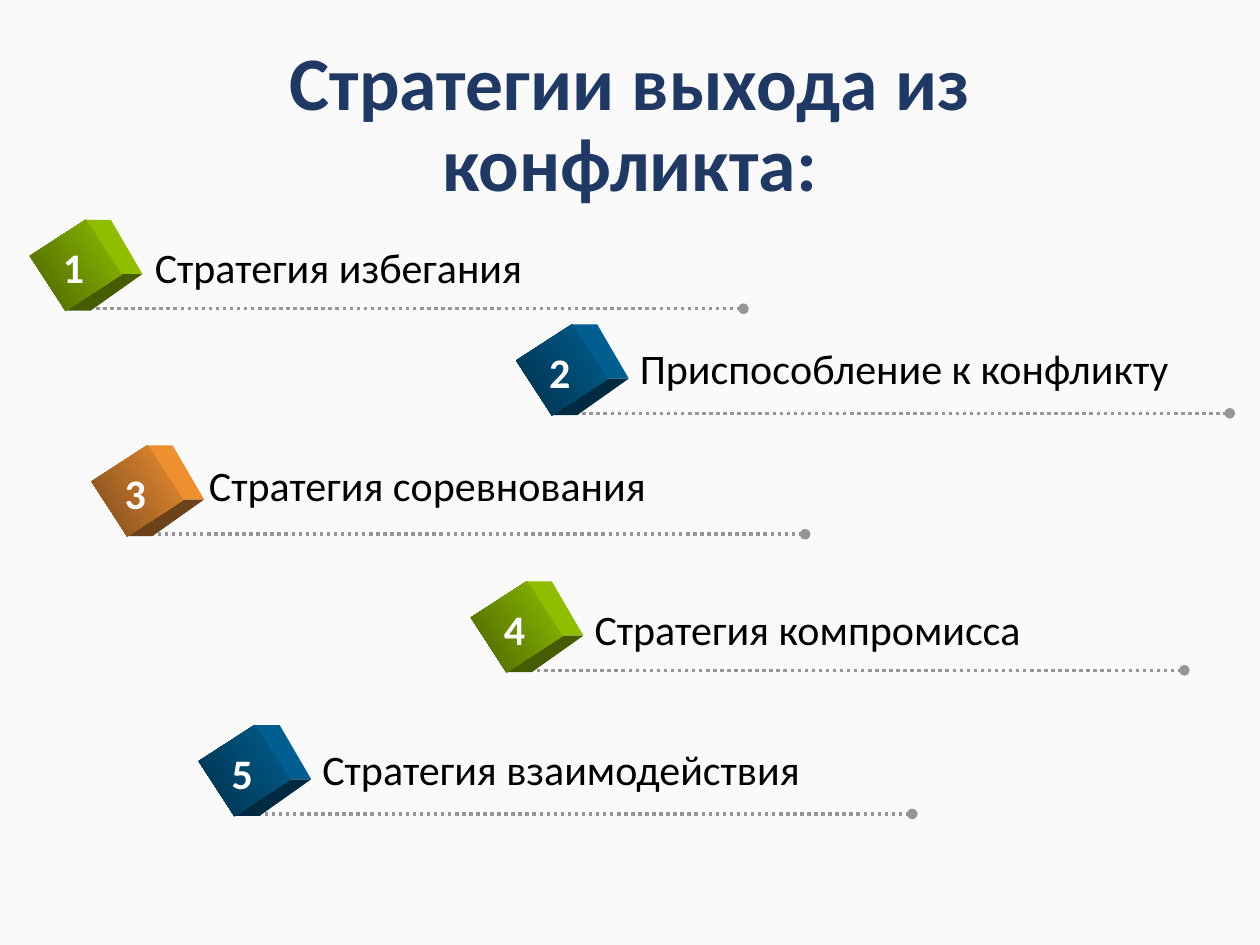
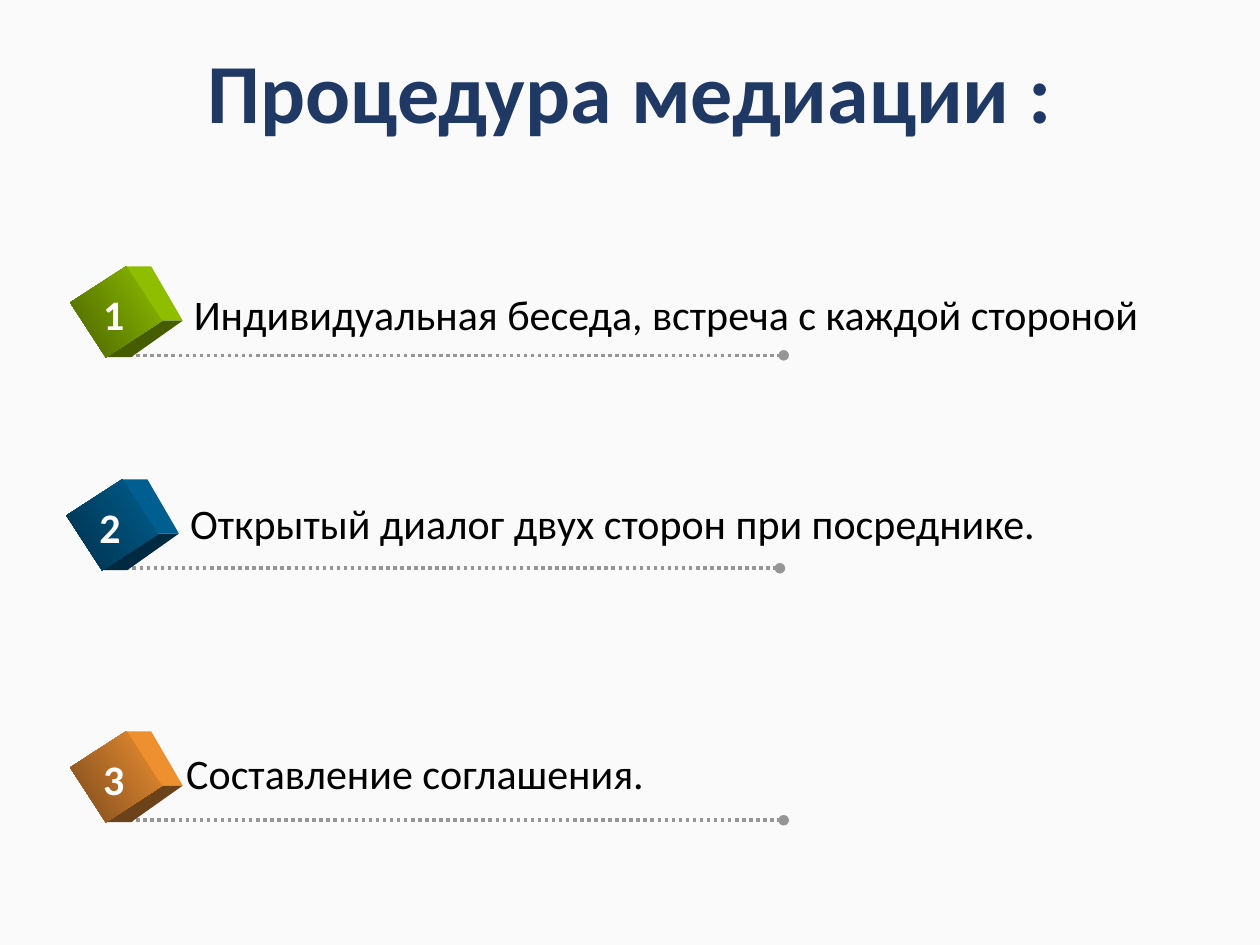
"""Build two slides of numbered cubes with dotted rules under each label."""
from dataclasses import dataclass

import pptx
import pptx.dml.color
import pptx.enum.dml
import pptx.enum.shapes
import pptx.enum.text
import pptx.oxml
import pptx.oxml.ns
import pptx.util

Inches = pptx.util.Inches
FONT = "Calibri"
BACKGROUND = "FAFAFA"
TITLE_COLOR = "203864"
RULE_COLOR = "969696"
CUBE_TURN = 57
FRONT_WIDTH, FRONT_HEIGHT = 0.52, 0.53
TOP_FACE = [(0.08, -0.36), (0.28, -0.36), (0.53, 0.07), (0.36, 0.07)]
BOTTOM_FACE = [(-0.08, 0.36), (0.12, 0.36), (0.53, 0.07), (0.36, 0.07)]


@dataclass(frozen=True)
class Palette:
    light: str
    shade: str
    dark: str


@dataclass(frozen=True)
class Step:
    label: str
    left: float
    top: float
    label_left: float
    label_top: float
    label_width: float


@dataclass(frozen=True)
class Page:
    title: str
    title_size: float
    title_height: float
    steps: tuple[Step, ...]


GREEN = Palette("8FBE00", "4A6300", "455C00")
BLUE = Palette("005F90", "00304A", "002A42")
ORANGE = Palette("EE9030", "7A4A1E", "6B421A")
PALETTES = (GREEN, BLUE, ORANGE)

PAGES = (
    Page("Стратегии выхода из конфликта:", 43.2, 1.35, (
        Step("Стратегия избегания", 0.34, 1.82, 1.13, 1.87, 3.15),
        Step("Приспособление к конфликту", 4.2, 2.65, 4.98, 2.67, 4.44),
        Step("Стратегия соревнования", 0.83, 3.61, 1.56, 3.6, 3.7),
        Step("Стратегия компромисса", 3.84, 4.69, 4.62, 4.74, 3.61),
        Step("Стратегия взаимодействия", 1.68, 5.83, 2.46, 5.85, 4.03),
    )),
    Page("Процедура медиации :", 48, 0.87, (
        Step("Индивидуальная беседа, встреча с каждой стороной",
             0.66, 2.19, 1.44, 2.24, 7.74),
        Step("Открытый диалог двух сторон при посреднике.",
             0.63, 3.88, 1.41, 3.9, 6.92),
        Step("Составление соглашения.", 0.66, 5.88, 1.38, 5.88, 3.83),
    )),
)


def rgb(value: str) -> pptx.dml.color.RGBColor:
    """Turn a hex string into a colour."""
    return pptx.dml.color.RGBColor.from_string(value)


def add_text(shapes, text: str, left: float, top: float, width: float,
             height: float, size: float, color: str, bold: bool = False,
             wrap: bool = False):
    """Add a one-paragraph text box and return it."""
    box = shapes.add_textbox(Inches(left), Inches(top), Inches(width), Inches(height))
    box.text_frame.text = text
    box.text_frame.word_wrap = wrap
    font = box.text_frame.paragraphs[0].runs[0].font
    font.name, font.size, font.bold = FONT, pptx.util.Pt(size), bold
    font.color.rgb = rgb(color)
    return box


def add_rule(shapes, left: float, top: float, length: float) -> None:
    """Add a dotted rule that ends in a round dot."""
    rule = shapes.add_connector(pptx.enum.shapes.MSO_CONNECTOR.STRAIGHT, Inches(left),
                                Inches(top), Inches(left + length), Inches(top))
    rule.line.color.rgb = rgb(RULE_COLOR)
    rule.line.width = pptx.util.Pt(2)
    rule.line.dash_style = pptx.enum.dml.MSO_LINE.ROUND_DOT
    properties = rule._element.spPr
    outline = properties.find(pptx.oxml.ns.qn("a:ln"))
    namespace = pptx.oxml.ns.nsdecls("a")
    outline.append(pptx.oxml.parse_xml(f'<a:tailEnd {namespace} type="oval"/>'))
    properties.append(pptx.oxml.parse_xml(f"<a:effectLst {namespace}/>"))


def add_face(shapes, center_x: float, center_y: float,
             corners: list[tuple[float, float]], color: str) -> None:
    """Add one side face of a cube from corners given around its centre."""
    points = [(Inches(center_x + x), Inches(center_y + y)) for x, y in corners]
    builder = shapes.build_freeform(*points[0])
    builder.add_line_segments(points[1:], close=True)
    face = builder.convert_to_shape()
    face.shadow.inherit = False
    face.fill.solid()
    face.fill.fore_color.rgb = rgb(color)
    face.line.fill.background()


def add_cube(shapes, left: float, top: float, palette: Palette) -> None:
    """Add a tilted cube made of two side faces and a shaded front."""
    center_x, center_y = left + 0.26, top + 0.285
    add_face(shapes, center_x, center_y, TOP_FACE, palette.light)
    add_face(shapes, center_x, center_y, BOTTOM_FACE, palette.dark)
    front = shapes.add_shape(
        pptx.enum.shapes.MSO_SHAPE.RECTANGLE,
        Inches(center_x - FRONT_WIDTH / 2), Inches(center_y - FRONT_HEIGHT / 2),
        Inches(FRONT_WIDTH), Inches(FRONT_HEIGHT))
    front.rotation = CUBE_TURN
    front.shadow.inherit = False
    front.line.fill.background()
    front.fill.gradient()
    front.fill.gradient_angle = 270
    for stop, color in zip(front.fill.gradient_stops, (palette.light, palette.shade)):
        stop.color.rgb = rgb(color)


def add_step(slide, number: int, step: Step) -> None:
    """Add a grouped step: rule, cube, label and number."""
    shapes = slide.shapes.add_group_shape().shapes
    add_rule(shapes, step.left + 0.31, step.top + 0.63, 5.25)
    add_cube(shapes, step.left, step.top, PALETTES[(number - 1) % len(PALETTES)])
    add_text(shapes, step.label, step.label_left, step.label_top,
             step.label_width, 0.5, 24, "000000")
    add_text(shapes, str(number), step.left + 0.06, step.top + 0.05,
             0.39, 0.5, 24, "FFFFFF", bold=True)


def add_page(deck, page: Page) -> None:
    """Add a slide with its title and steps."""
    slide = deck.slides.add_slide(deck.slide_layouts[6])
    slide.background.fill.solid()
    slide.background.fill.fore_color.rgb = rgb(BACKGROUND)
    title = add_text(slide.shapes, page.title, 0.69, 0.33, 8.62, page.title_height,
                     page.title_size, TITLE_COLOR, bold=True, wrap=True)
    title.text_frame.vertical_anchor = pptx.enum.text.MSO_ANCHOR.MIDDLE
    title.text_frame.paragraphs[0].alignment = pptx.enum.text.PP_ALIGN.CENTER
    title.text_frame.paragraphs[0].line_spacing = 0.9
    for number, step in enumerate(page.steps, start=1):
        add_step(slide, number, step)


def main() -> None:
    """Build and save the deck."""
    deck = pptx.Presentation()
    deck.slide_width, deck.slide_height = Inches(10), Inches(7.5)
    for page in PAGES:
        add_page(deck, page)
    deck.save("out.pptx")


if __name__ == "__main__":
    main()
